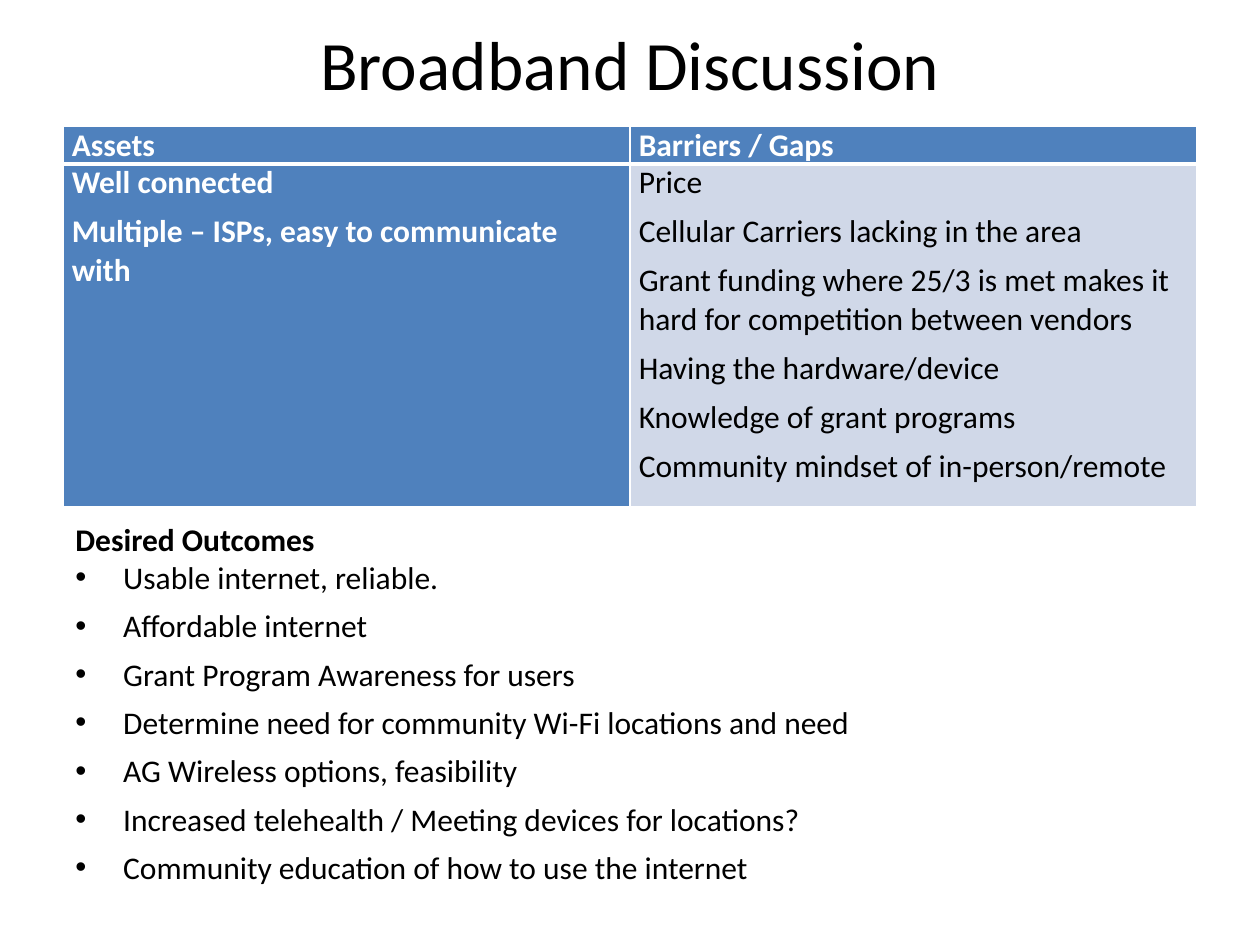
from lxml import etree
from pptx import Presentation
from pptx.dml.color import RGBColor
from pptx.enum.text import MSO_ANCHOR, PP_ALIGN
from pptx.oxml.ns import qn
from pptx.util import Inches, Pt

CENTER = PP_ALIGN.CENTER
TOP, MIDDLE = MSO_ANCHOR.TOP, MSO_ANCHOR.MIDDLE
WIDE, HIGH = 10, 7.5
LEFT, SPAN = 0.05, 0.9  # shares of the slide's width

HEADS = ["Assets", "Barriers / Gaps"]
ASSETS = ["Well connected", "Multiple – ISPs, easy to communicate with"]
GAPS = [
    "Price",
    "Cellular Carriers lacking in the area",
    "Grant funding where 25/3 is met makes it hard for competition between vendors",
    "Having the hardware/device",
    "Knowledge of grant programs",
    "Community mindset of in-person/remote",
]
GOALS = [
    "Usable internet, reliable.",
    "Affordable internet",
    "Grant Program Awareness for users",
    "Determine need for community Wi-Fi locations and need",
    "AG Wireless options, feasibility",
    "Increased telehealth / Meeting devices for locations?",
    "Community education of how to use the internet",
]


def color(code):
    return RGBColor.from_string(code)


class Deck:
    font, size = "Calibri", 18
    black, white, blue, pale = "000000", "FFFFFF", "4F81BD", "D0D8E8"

    def __init__(self):
        self.file = Presentation()
        self.file.slide_width, self.file.slide_height = Inches(WIDE), Inches(HIGH)
        self.slide = self.file.slides.add_slide(self.file.slide_layouts[6])

    def area(self, top, height):
        """Full-width band; top and height are shares of the slide's height."""
        return (Inches(LEFT * WIDE), Inches(top * HIGH),
                Inches(SPAN * WIDE), Inches(height * HIGH))

    def text(self, frame, lines, ink=black, bold=False, size=size, after=0,
             align=None, bullet=False, fresh=True):
        """Fill a frame, or add to its end when fresh is False."""
        for i, line in enumerate(lines):
            first = fresh and i == 0
            para = frame.paragraphs[0] if first else frame.add_paragraph()
            para.text = line
            para.alignment = align
            para.space_after = Pt(after)
            if bullet:
                self.bullet(para)
            para.font.name, para.font.size = self.font, Pt(size)
            para.font.bold = bold
            para.font.color.rgb = color(ink)

    def bullet(self, para):
        props = para._p.get_or_add_pPr()
        props.set("marL", str(Inches(0.38)))
        props.set("indent", str(-Inches(0.38)))
        etree.SubElement(props, qn("a:buFont"), typeface="Arial")
        etree.SubElement(props, qn("a:buChar"), char="•")

    def box(self, top, height, anchor=TOP):
        frame = self.slide.shapes.add_textbox(*self.area(top, height)).text_frame
        frame.word_wrap = True
        frame.vertical_anchor = anchor
        return frame

    def table(self, top, rows):
        """Add a two-column table; rows are shares of the slide's height."""
        shape = self.slide.shapes.add_table(len(rows), 2, *self.area(top, sum(rows)))
        grid = shape.table
        for row, share in zip(grid.rows, rows):
            row.height = Inches(share * HIGH)
        return grid

    def cell(self, cell, lines, fill, edges, **style):
        """Fill a cell; edges maps each side (L, R, T, B) to a width in points."""
        cell.margin_left = cell.margin_right = Inches(0.07)
        cell.margin_top = cell.margin_bottom = 0
        props = cell._tc.get_or_add_tcPr()
        for side, width in edges.items():
            line = etree.SubElement(props, qn("a:ln" + side), w=str(Pt(width)))
            solid = etree.SubElement(line, qn("a:solidFill"))
            etree.SubElement(solid, qn("a:srgbClr"), val=self.white)
        cell.fill.solid()
        cell.fill.fore_color.rgb = color(fill)
        self.text(cell.text_frame, lines, **style)


def main():
    deck = Deck()
    title = deck.box(0.23 / HIGH, 0.53 / HIGH, MIDDLE)
    deck.text(title, ["Broadband Discussion"], size=39.6, align=CENTER)

    grid = deck.table(1 / HIGH, [0.3 / HIGH, 2.72 / HIGH])
    head = {"L": 1, "R": 1, "T": 1, "B": 3}
    body = {"L": 1, "R": 1, "T": 3, "B": 1}
    for col, label in enumerate(HEADS):
        deck.cell(grid.cell(0, col), [label], deck.blue, head,
                  ink=deck.white, bold=True)
    deck.cell(grid.cell(1, 0), ASSETS, deck.blue, body,
              ink=deck.white, bold=True, after=6)
    deck.cell(grid.cell(1, 1), GAPS, deck.pale, body, after=6)

    goals = deck.box(4.08 / HIGH, 3.03 / HIGH)
    deck.text(goals, ["Desired Outcomes"], bold=True)
    deck.text(goals, GOALS, after=6, bullet=True, fresh=False)
    deck.file.save("out.pptx")


if __name__ == "__main__":
    main()
